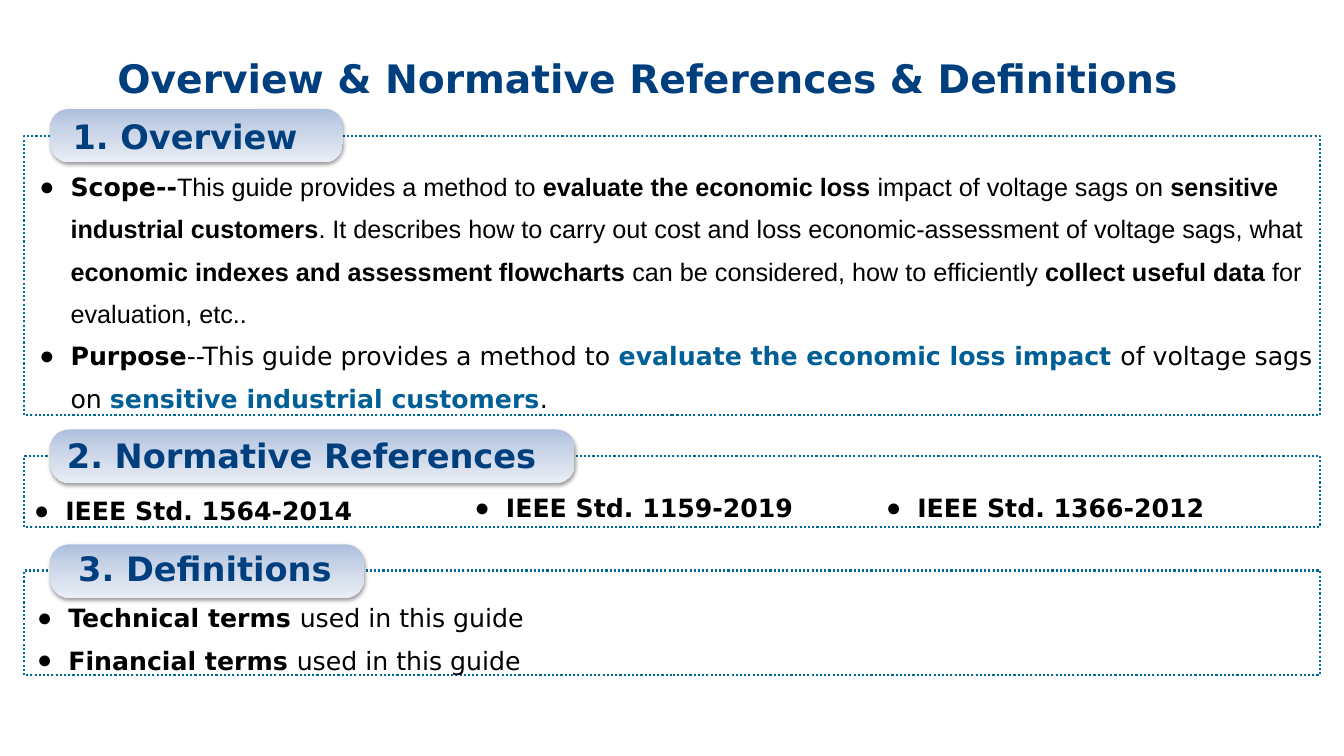
from dataclasses import dataclass

from lxml import etree
from pptx import Presentation
from pptx.dml.color import RGBColor
from pptx.enum import dml, shapes, text
from pptx.oxml import ns, parse_xml
from pptx.util import Inches, Pt


# Theme
@dataclass(frozen=True)
class Theme:
    navy: str = "003F7E"
    blue: str = "006096"
    edge: str = "006799"
    black: str = "000000"
    fade: tuple = ((0, "ACBFDE"), (35, "C6D2E6"), (100, "E9EEF6"))
    main: str = "DejaVu Sans"
    plain: str = "Arial"
    title: int = 28
    head: int = 24
    body: int = 18


T = Theme()


@dataclass(frozen=True)
class Box:
    x: float
    y: float
    w: float
    h: float

    def emu(self) -> tuple:
        return tuple(Inches(v) for v in (self.x, self.y, self.w, self.h))


@dataclass(frozen=True)
class Bit:
    text: str
    bold: bool = False
    color: str = T.black
    font: str = T.main


@dataclass(frozen=True)
class Part:
    name: str
    frame: Box
    pill: Box
    label: Box
    mid: bool = False


@dataclass(frozen=True)
class Items:
    box: Box
    rows: tuple


# Content
PARTS = (
    Part("1. Overview", Box(0.24, 1.35, 12.85, 2.77),
         Box(0.5, 1.08, 2.9, 0.53), Box(0.6, 1.11, 2.9, 0.53)),
    Part("2. Normative References ", Box(0.24, 4.52, 12.85, 0.71),
         Box(0.5, 4.26, 5.2, 0.53), Box(0.3, 4.28, 5.5, 0.53), True),
    Part(" 3. Definitions", Box(0.24, 5.66, 12.85, 1.04),
         Box(0.5, 5.4, 3.11, 0.53), Box(0.54, 5.4, 2.9, 0.53)),
)

SCOPE = (
    ("This guide provides a method to ", False),
    ("evaluate the economic loss ", True),
    ("impact of voltage sags on ", False),
    ("sensitive industrial customers", True),
    (". It describes how to carry out cost and loss economic-assessment "
     "of voltage sags, what ", False),
    ("economic indexes and assessment flowcharts", True),
    (" can be considered, how to efficiently ", False),
    ("collect useful data ", True),
    ("for evaluation, etc..", False),
)

OVERVIEW = Items(Box(0.29, 1.53, 13.17, 2.59), (
    (Bit("Scope--", True),
     *(Bit(words, bold, font=T.plain) for words, bold in SCOPE)),
    (Bit("Purpose", True),
     Bit("--This guide provides a method to "),
     Bit("evaluate the economic loss impact ", True, T.blue),
     Bit("of voltage sags on "),
     Bit("sensitive industrial customers", True, T.blue),
     Bit(".")),
))

LISTS = (
    Items(Box(0.24, 4.75, 4.9, 0.47), ((Bit("IEEE Std. 1564-2014", True),),)),
    Items(Box(4.61, 4.72, 3.71, 0.47), ((Bit("IEEE Std. 1159-2019", True),),)),
    Items(Box(8.69, 4.72, 3.56, 0.47), ((Bit("IEEE Std. 1366-2012", True),),)),
    Items(Box(0.27, 5.81, 12.79, 0.9), tuple(
        (Bit(kind + " terms ", True), Bit("used in this guide"))
        for kind in ("Technical", "Financial"))),
)


# Text
def style(run, size: int, bit: Bit) -> None:
    font = run.font
    font.size, font.bold, font.name = Pt(size), bit.bold, bit.font
    font.color.rgb = RGBColor.from_string(bit.color)


def place(shape, box: Box) -> None:
    shape.left, shape.top, shape.width, shape.height = box.emu()


def fill_list(shape, items: Items) -> None:
    frame = shape.text_frame
    frame.word_wrap = True
    frame.auto_size = text.MSO_AUTO_SIZE.SHAPE_TO_FIT_TEXT
    for i, row in enumerate(items.rows):
        para = frame.add_paragraph() if i else frame.paragraphs[0]
        props = para._p.get_or_add_pPr()
        props.set("marL", str(Inches(0.31)))
        props.set("indent", str(-Inches(0.31)))
        etree.SubElement(props, ns.qn("a:buFont"), typeface=T.plain)
        etree.SubElement(props, ns.qn("a:buChar"), char="●")
        para.line_spacing = 1.4
        para.space_before = Pt(0)
        for bit in row:
            run = para.add_run()
            run.text = bit.text
            style(run, T.body, bit)


# Section frames and headings
def add_frame(slide, box: Box) -> None:
    rect = slide.shapes.add_shape(shapes.MSO_SHAPE.RECTANGLE, *box.emu())
    rect.shadow.inherit = False
    rect.fill.background()
    rect.line.color.rgb = RGBColor.from_string(T.edge)
    rect.line.width = Pt(1.5)
    rect.line.dash_style = dml.MSO_LINE.ROUND_DOT


def add_pill(slide, box: Box) -> None:
    pill = slide.shapes.add_shape(
        shapes.MSO_SHAPE.ROUNDED_RECTANGLE, *box.emu())
    pill.adjustments[0] = 0.352
    pill.rotation = 180
    pill.line.fill.background()
    stops = "".join(
        f'<a:gs pos="{pos * 1000}"><a:srgbClr val="{tint}"/></a:gs>'
        for pos, tint in T.fade)
    fade = parse_xml(
        f'<a:gradFill {ns.nsdecls("a")} rotWithShape="1">'
        f'<a:gsLst>{stops}</a:gsLst><a:lin ang="16200000" scaled="0"/>'
        '</a:gradFill>')
    glow = parse_xml(
        f'<a:effectLst {ns.nsdecls("a")}><a:outerShdw blurRad="{Pt(3.1)}" '
        f'dist="{Pt(1.6)}" dir="5400000" rotWithShape="0">'
        f'<a:srgbClr val="{T.black}"><a:alpha val="38000"/></a:srgbClr>'
        '</a:outerShdw></a:effectLst>')
    props = pill._element.spPr
    props.find(ns.qn("a:ln")).addprevious(fade)
    props.append(glow)


def add_label(slide, part: Part) -> None:
    frame = slide.shapes.add_textbox(*part.label.emu()).text_frame
    frame.text = part.name
    frame.word_wrap = True
    frame.vertical_anchor = text.MSO_ANCHOR.MIDDLE
    frame.margin_left = frame.margin_right = Inches(0.12)
    frame.margin_top = frame.margin_bottom = Inches(0.12)
    para = frame.paragraphs[0]
    para.line_spacing = 0.9
    para.alignment = text.PP_ALIGN.CENTER if part.mid else text.PP_ALIGN.LEFT
    style(para.runs[0], T.head, Bit(part.name, True, T.navy))


def main() -> None:
    deck = Presentation()
    deck.slide_width, deck.slide_height = Inches(13.33), Inches(7.5)
    slide = deck.slides.add_slide(deck.slide_layouts[1])

    # Title
    title = slide.shapes.title
    place(title, Box(0.93, 0.49, 10.97, 1.57))
    frame = title.text_frame
    frame.text = " Overview & Normative References & Definitions"
    frame.vertical_anchor = text.MSO_ANCHOR.TOP
    para = frame.paragraphs[0]
    para.alignment = text.PP_ALIGN.LEFT
    style(para.runs[0], T.title, Bit(frame.text, True, T.navy))

    # Sections
    for part in PARTS:
        add_frame(slide, part.frame)
        add_pill(slide, part.pill)
        add_label(slide, part)

    # Lists
    body = slide.placeholders[1]
    place(body, OVERVIEW.box)
    fill_list(body, OVERVIEW)
    for items in LISTS:
        fill_list(slide.shapes.add_textbox(*items.box.emu()), items)

    deck.save("out.pptx")


if __name__ == "__main__":
    main()
